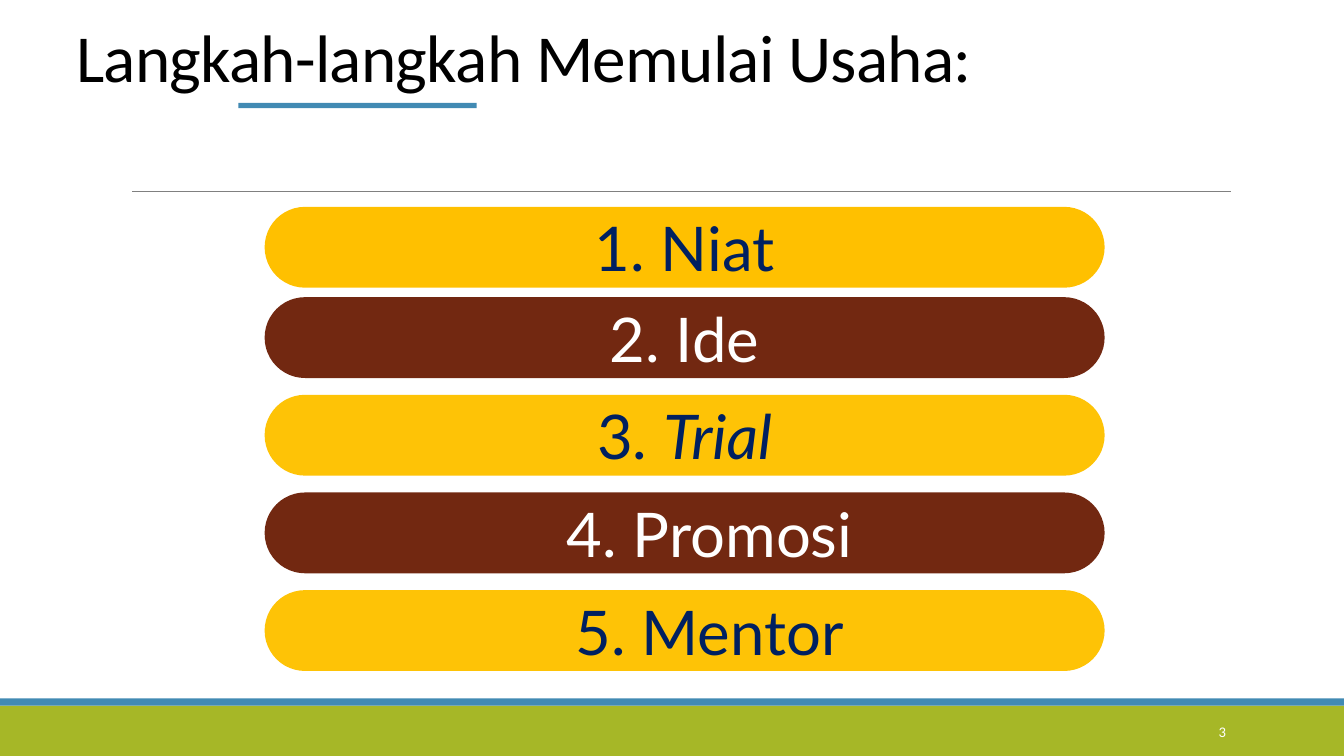
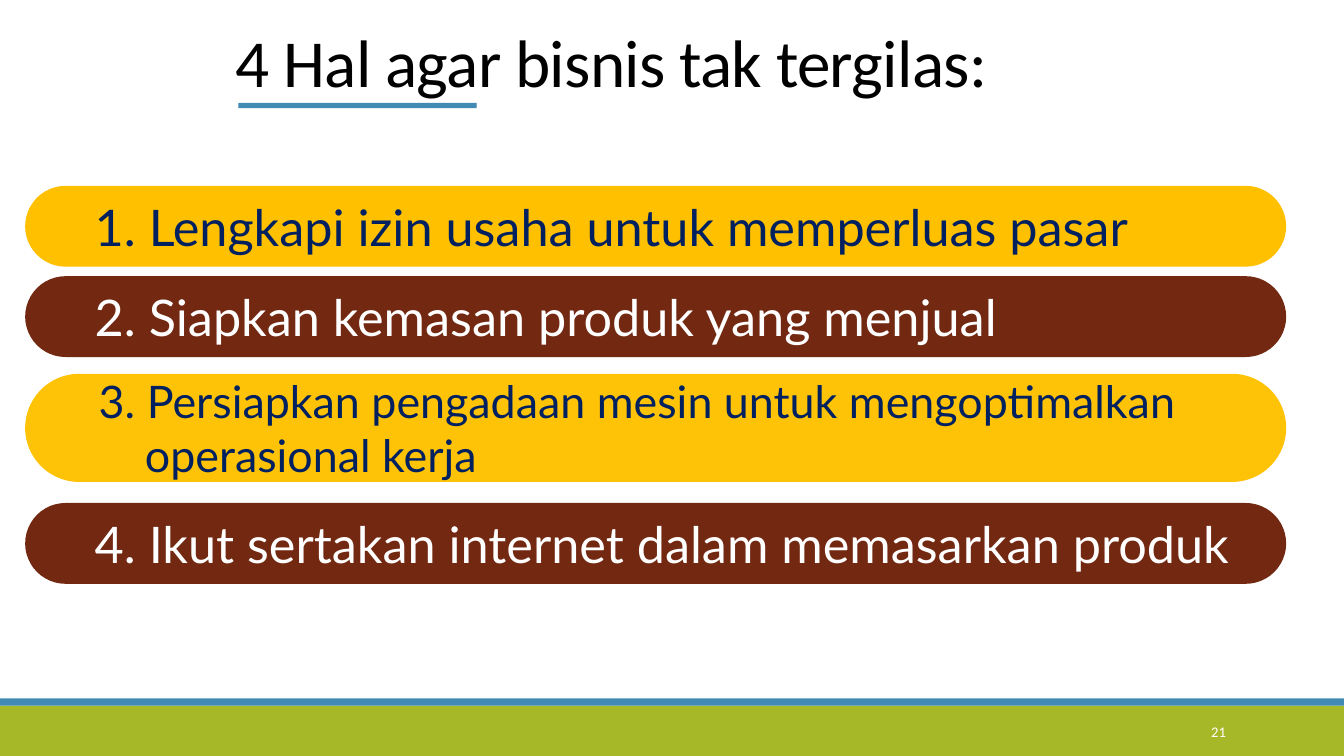
"""Build two slides of numbered business advice on rounded bars."""
from pptx import Presentation
from pptx.dml.color import RGBColor
from pptx.enum.shapes import MSO_CONNECTOR, MSO_SHAPE
from pptx.enum.text import MSO_ANCHOR, MSO_AUTO_SIZE, PP_ALIGN
from pptx.oxml.ns import qn
from pptx.util import Pt
from lxml import etree

RECT, ROUNDED = MSO_SHAPE.RECTANGLE, MSO_SHAPE.ROUNDED_RECTANGLE
STRAIGHT = MSO_CONNECTOR.STRAIGHT
MIDDLE, BOTTOM = MSO_ANCHOR.MIDDLE, MSO_ANCHOR.BOTTOM
NO_FIT = MSO_AUTO_SIZE.NONE
LEFT, CENTER, RIGHT = PP_ALIGN.LEFT, PP_ALIGN.CENTER, PP_ALIGN.RIGHT

GREEN = RGBColor(0xA6, 0xB7, 0x27)
BLUE = RGBColor(0x41, 0x8A, 0xB3)
GRAY = RGBColor(0x80, 0x80, 0x80)
AMBER = RGBColor(0xFF, 0xC0, 0x00)
GOLD = RGBColor(0xFE, 0xC3, 0x06)
BROWN = RGBColor(0x72, 0x28, 0x11)
NAVY = RGBColor(0x00, 0x20, 0x60)
WHITE = RGBColor(0xFF, 0xFF, 0xFF)
BLACK = RGBColor(0x00, 0x00, 0x00)

EMU_PER_PX = 9525
WIDTH, HEIGHT = 1280, 720
BAR_H = 77
INDENT = 48
HANGING = 44
BAR_COLORS = [(AMBER, NAVY), (BROWN, WHITE), (GOLD, NAVY), (BROWN, WHITE), (GOLD, NAVY)]

STEPS = [("1. Niat", "", 0), ("2. Ide", "", 0), ("3. ", "Trial", 0),
         ("4. Promosi", "", INDENT), ("5. Mentor", "", INDENT)]
STEPS_TOP, STEPS_NEXT, STEPS_PITCH = 197, 283, 93
TIPS = [("1. Lengkapi izin usaha untuk memperluas pasar", 177, BAR_H, 36),
        ("2. Siapkan kemasan produk yang menjual", 263, BAR_H, 36),
        ("3. Persiapkan pengadaan mesin untuk mengoptimalkan operasional kerja", 356, 103, 32),
        ("4. Ikut sertakan internet dalam memasarkan produk", 479, BAR_H, 36)]


def px(*lengths):
    """Turn pixel lengths into EMU."""
    return [n * EMU_PER_PX for n in lengths]


def set_font(p, name, size, color):
    """Set the font of a whole paragraph."""
    p.font.name, p.font.size = name, Pt(size)
    p.font.color.rgb = color


def add_block(s, kind, box, fill):
    """Add a flat shape without outline."""
    sp = s.shapes.add_shape(kind, *px(*box))
    sp.shadow.inherit = False
    sp.fill.solid()
    sp.fill.fore_color.rgb = fill
    sp.line.fill.background()
    return sp


def add_rule(s, left, right, y):
    """Add a thin horizontal line."""
    line = s.shapes.add_connector(STRAIGHT, *px(left, y, right, y))
    line.line.color.rgb = GRAY
    line.line.width = Pt(0.5)
    etree.SubElement(line._element.spPr, qn("a:effectLst"))


def add_number(s, number):
    """Add the page number in the footer band."""
    tf = s.shapes.add_textbox(*px(1040, 678, 137, 38)).text_frame
    tf.word_wrap, tf.vertical_anchor = True, MIDDLE
    p = tf.paragraphs[0]
    p.text, p.alignment = str(number), RIGHT
    set_font(p, "Calibri", 10.5, WHITE)


def set_title(s, text, left, top):
    """Place and format the title placeholder."""
    sp = s.shapes.title
    sp.left, sp.top, sp.width, sp.height = px(left, top, 1004, 84)
    tf = sp.text_frame
    tf.word_wrap, tf.auto_size, tf.vertical_anchor = True, NO_FIT, BOTTOM
    p = tf.paragraphs[0]
    p.alignment, p.line_spacing = LEFT, 0.85
    set_font(p, "Calibri", 48, BLACK)
    r = p.add_run()
    r.text = text
    r.font._element.set("spc", "-50")


def add_slide(prs, title, left, top, number):
    """Add a slide with the shared bands, title and page number."""
    s = prs.slides.add_slide(prs.slide_layouts[5])
    add_block(s, RECT, (0, 672, WIDTH, 48), GREEN)
    add_block(s, RECT, (0, 665, WIDTH, 7), BLUE)
    add_block(s, RECT, (227, 98, 227, 5), BLUE)
    set_title(s, title, left, top)
    add_number(s, number)
    return s


def add_bar(s, box, colors, size, align, text, italic="", margin=0, hanging=0):
    """Add a pill-shaped bar with one paragraph of text."""
    fill, color = colors
    sp = add_block(s, ROUNDED, box, fill)
    sp.adjustments[0] = 0.5
    tf = sp.text_frame
    tf.word_wrap, tf.vertical_anchor = True, MIDDLE
    tf.margin_left, tf.margin_right, tf.margin_top, tf.margin_bottom = px(7, 7, 3, 3)
    p = tf.paragraphs[0]
    p.alignment = align
    set_font(p, "Lato", size, color)
    p.add_run().text = text
    if italic:
        r = p.add_run()
        r.text, r.font.italic = italic, True
    pPr = p._p.get_or_add_pPr()
    for name, length in zip(("marL", "indent"), px(margin + hanging, -hanging)):
        pPr.set(name, str(length))


def add_steps(prs):
    """Add the slide on the steps of starting a business."""
    s = add_slide(prs, "Langkah-langkah Memulai Usaha:", 63, 12, 3)
    add_rule(s, 126, 1172, 182)
    tops = [STEPS_TOP] + [STEPS_NEXT + i * STEPS_PITCH for i in range(len(STEPS) - 1)]
    for (text, italic, margin), top, colors in zip(STEPS, tops, BAR_COLORS):
        add_bar(s, (252, top, 800, BAR_H), colors, 44, CENTER, text, italic, margin)


def add_tips(prs):
    """Add the slide on keeping a business alive."""
    s = add_slide(prs, "4 Hal agar bisnis tak tergilas:", 215, 17, 21)
    for (text, top, height, size), colors in zip(TIPS, BAR_COLORS):
        add_bar(s, (24, top, 1201, height), colors, size, LEFT, text,
                margin=INDENT, hanging=HANGING)


def main():
    """Build and save the presentation."""
    prs = Presentation()
    prs.slide_width, prs.slide_height = px(WIDTH, HEIGHT)
    add_steps(prs)
    add_tips(prs)
    prs.save("out.pptx")


if __name__ == "__main__":
    main()
